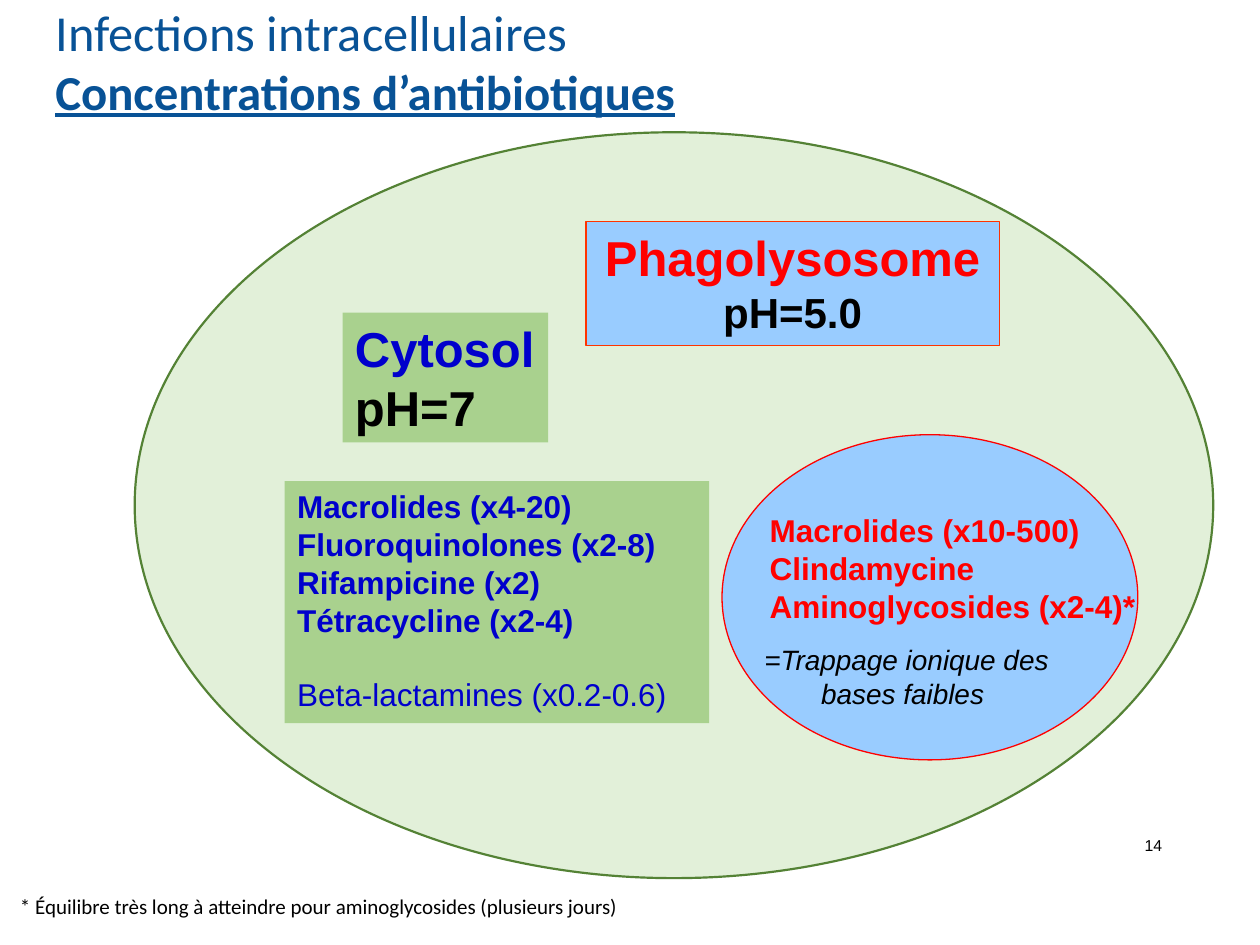
"""Builds the slide on antibiotic concentrations inside infected cells."""
from pptx import Presentation
from pptx import util as u
from pptx.dml import color
from pptx.enum import shapes, text

RED, BLUE, BLACK, NAVY = "FF0000", "0000CC", "000000", "085296"
SKY, GREEN, PALE, DARK = "99CCFF", "A9D18E", "E2F0D9", "548235"
OVAL, RECT = shapes.MSO_SHAPE.OVAL, shapes.MSO_SHAPE.RECTANGLE
LEFT, MID, RIGHT = text.PP_ALIGN.LEFT, text.PP_ALIGN.CENTER, text.PP_ALIGN.RIGHT

HEAD = [
    ("Infections intracellulaires", dict(size=28.8)),
    ("Concentrations d’antibiotiques", dict(size=27.9, bold=True, line=True)),
]
CELL = dict(at=(77, 75.6, 616.3, 426.2), kind=OVAL, fill=PALE, edge=(DARK, 1.25))
PARTS = [
    dict(at=(477.4, 468.7, 193.7, 28.8), side=RIGHT, fit=False,
         rows=[("14", dict(size=9))]),
    dict(at=(412.6, 248.4, 237.6, 185.8), kind=OVAL, fill=SKY, edge=(RED, 0.75)),
    dict(at=(334.8, 126.7, 236.2, 70.6), kind=RECT, fill=SKY,
         edge=("FF3300", 0.75), side=MID,
         rows=[("Phagolysosome", dict(size=28, tint=RED, bold=True)),
               ("pH=5.0", dict(size=24, bold=True))]),
    dict(at=(432.7, 288.7, 225.4, 72.7), wrap=False,
         rows=[(drug, dict(size=18, tint=RED, bold=True)) for drug in
               ("Macrolides (x10-500)", "Clindamycine", "Aminoglycosides (x2-4)*")]),
    dict(at=(195.8, 178.6, 117.4, 74.2), kind=RECT, fill=GREEN, wrap=False,
         rows=[("Cytosol", dict(size=28, tint=BLUE, bold=True)),
               ("pH=7", dict(size=28, bold=True))]),
    dict(at=(162.7, 275, 242.6, 138.2), kind=RECT, fill=GREEN,
         rows=[(drug, dict(size=18, tint=BLUE, bold=True)) for drug in
               ("Macrolides (x4-20)", "Fluoroquinolones (x2-8)",
                "Rifampicine (x2)", "Tétracycline (x2-4)")]
         + [("Beta-lactamines (x0.2-0.6)", dict(size=18, tint=BLUE, gap=20.7))]),
    dict(at=(415.4, 363.6, 205.2, 46.1), side=MID,
         rows=[("=Trappage ionique des bases faibles ", dict(size=16, slant=True))]),
    dict(at=(4.3, 506.9, 360, 21.6), wrap=False,
         rows=[("* Équilibre très long à atteindre pour aminoglycosides (plusieurs jours)",
                dict(size=12, face="Calibri"))]),
]


def rgb(code):
    """Turn a hex string into a colour."""
    return color.RGBColor.from_string(code)


def put(para, words, size, tint=BLACK, bold=False, slant=False, line=False, face="Arial"):
    """Add one formatted run to a paragraph."""
    run = para.add_run()
    run.text = words
    font = run.font
    font.name, font.size, font.color.rgb = face, u.Pt(size), rgb(tint)
    font.bold, font.italic, font.underline = bold, slant, line


def part(slide, at, kind=None, fill=None, edge=None, rows=(), side=LEFT, wrap=True, fit=True):
    """Add a shape or text box with its paragraphs."""
    area = [u.Pt(n) for n in at]
    if kind is None:
        item = slide.shapes.add_textbox(*area)
    else:
        item = slide.shapes.add_shape(kind, *area)
        item.shadow.inherit = False
        item.fill.solid()
        item.fill.fore_color.rgb = rgb(fill)
        if edge:
            item.line.color.rgb, item.line.width = rgb(edge[0]), u.Pt(edge[1])
        else:
            item.line.fill.background()
    frame = item.text_frame
    frame.word_wrap = wrap
    if rows:
        size = text.MSO_AUTO_SIZE
        frame.auto_size = size.SHAPE_TO_FIT_TEXT if fit else size.NONE
        frame.vertical_anchor = text.MSO_ANCHOR.TOP if fit else text.MSO_ANCHOR.MIDDLE
    for i, (words, look) in enumerate(rows):
        para = frame.add_paragraph() if i else frame.paragraphs[0]
        para.alignment = side
        look = dict(look)
        gap = look.pop("gap", 0)
        if gap:
            para.space_before = u.Pt(gap)
        put(para, words, **look)


def title(slide):
    """Place and fill the title."""
    item = slide.shapes.title
    item.left, item.top, item.width, item.height = map(u.Pt, (24.5, 10.8, 625, 47.5))
    frame = item.text_frame
    frame.auto_size = text.MSO_AUTO_SIZE.NONE
    frame.vertical_anchor = text.MSO_ANCHOR.MIDDLE
    para = frame.paragraphs[0]
    para.alignment = LEFT
    for i, (words, look) in enumerate(HEAD):
        if i:
            para.add_line_break()
        put(para, words, tint=NAVY, face="Calibri", **look)


def main():
    """Build and save the slide."""
    deck = Presentation()
    deck.slide_width, deck.slide_height = u.Pt(720), u.Pt(540)
    slide = deck.slides.add_slide(deck.slide_layouts[5])
    title(slide)
    for item in [CELL] + PARTS:
        part(slide, **item)
    deck.save("out.pptx")


if __name__ == "__main__":
    main()
